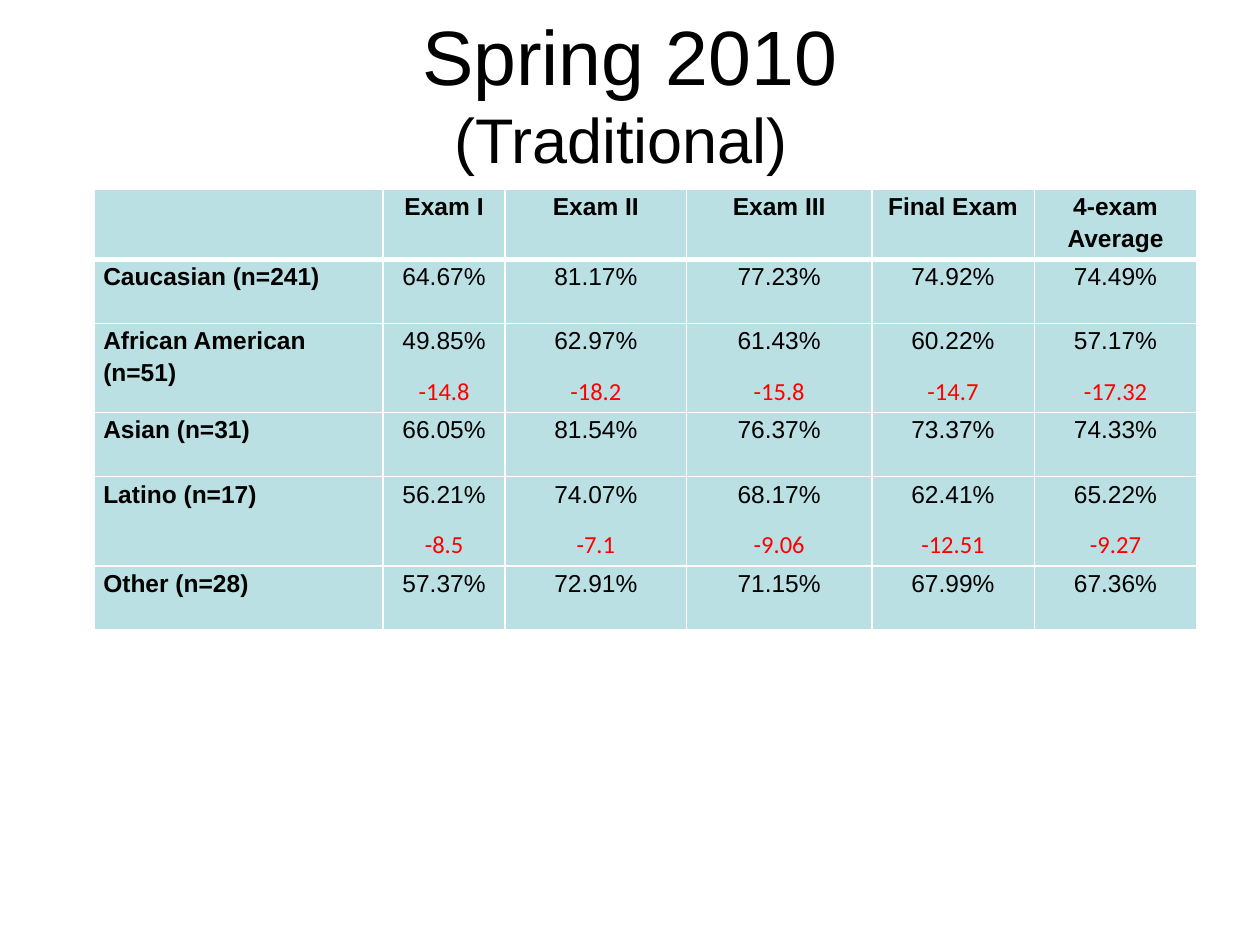
import dataclasses

import lxml.etree
import pptx
import pptx.dml.color
import pptx.enum.text
import pptx.oxml.ns
import pptx.util

Inches, Pt = pptx.util.Inches, pptx.util.Pt
ALIGN = pptx.enum.text.PP_ALIGN
ANCHOR = pptx.enum.text.MSO_ANCHOR


@dataclasses.dataclass(frozen=True)
class Theme:
    """Colours, fonts and type sizes of the slide."""
    text: str = "000000"
    gap: str = "FF0000"
    cell: str = "BBE0E3"
    rule: str = "FFFFFF"
    font: str = "Arial"
    gap_font: str = "Calibri"
    title: int = 44
    subtitle: int = 36
    body: int = 14
    thin: int = 1
    thick: int = 3


THEME = Theme()
HEADERS = ["", "Exam I", "Exam II", "Exam III", "Final Exam", "4-exam Average"]
GROUPS = [
    ("Caucasian (n=241)", ["64.67%", "81.17%", "77.23%", "74.92%", "74.49%"], []),
    ("African American (n=51)", ["49.85%", "62.97%", "61.43%", "60.22%", "57.17%"],
     ["-14.8", "-18.2", "-15.8", "-14.7", "-17.32"]),
    ("Asian (n=31)", ["66.05%", "81.54%", "76.37%", "73.37%", "74.33%"], []),
    ("Latino (n=17)", ["56.21%", "74.07%", "68.17%", "62.41%", "65.22%"],
     ["-8.5", "-7.1", "-9.06", "-12.51", "-9.27"]),
    ("Other (n=28)", ["57.37%", "72.91%", "71.15%", "67.99%", "67.36%"], []),
]
COLUMN_WIDTHS = [2.29, 0.97, 1.44, 1.47, 1.29, 1.29]
HEADER_HEIGHT, SINGLE_HEIGHT, DOUBLE_HEIGHT = 0.56, 0.51, 0.71


def add_text(p, text, size=THEME.body, font=THEME.font, color=THEME.text, bold=False):
    """Add a formatted run to a paragraph."""
    r = p.add_run()
    r.text = text
    r.font.size, r.font.name, r.font.bold = Pt(size), font, bold
    r.font.color.rgb = pptx.dml.color.RGBColor.from_string(color)


def style_cell(cell, top, bottom):
    """Set the insets, rules and fill of a table cell."""
    cell.margin_left = cell.margin_right = Inches(0.07)
    cell.margin_top = cell.margin_bottom = 0
    qn = pptx.oxml.ns.qn
    tcPr = cell._tc.get_or_add_tcPr()
    widths = {"lnL": THEME.thin, "lnR": THEME.thin, "lnT": top, "lnB": bottom}
    for side, width in widths.items():
        ln = lxml.etree.SubElement(tcPr, qn(f"a:{side}"), w=str(Pt(width)))
        fill = lxml.etree.SubElement(ln, qn("a:solidFill"))
        lxml.etree.SubElement(fill, qn("a:srgbClr"), val=THEME.rule)
    cell.fill.solid()
    cell.fill.fore_color.rgb = pptx.dml.color.RGBColor.from_string(THEME.cell)


def fill_cell(cell, lines, align):
    """Write one paragraph per (text, format) pair into a cell."""
    tf = cell.text_frame
    for i, (text, style) in enumerate(lines):
        p = tf.add_paragraph() if i else tf.paragraphs[0]
        p.alignment, p.line_spacing, p.space_after = align, 1.15, Pt(10)
        add_text(p, text, **style)


def place_title(s, box):
    """Place the two-line title in the box."""
    sp = s.shapes.title
    sp.left, sp.top, sp.width, sp.height = map(Inches, box)
    tf = sp.text_frame
    tf.word_wrap = True
    tf.auto_size = pptx.enum.text.MSO_AUTO_SIZE.NONE
    tf.vertical_anchor = ANCHOR.MIDDLE
    p = tf.paragraphs[0]
    p.alignment = ALIGN.CENTER
    add_text(p, "Spring 2010", size=THEME.title)
    p.add_line_break()
    add_text(p, "(Traditional) ", size=THEME.subtitle)


def place_scores(s, box):
    """Place the table of exam scores, scaling its grid to the box."""
    left, top, width, height = box
    row_heights = [HEADER_HEIGHT] + [
        DOUBLE_HEIGHT if gaps else SINGLE_HEIGHT for _, _, gaps in GROUPS]
    table = s.shapes.add_table(len(row_heights), len(HEADERS),
                               *map(Inches, box)).table
    for column, share in zip(table.columns, COLUMN_WIDTHS):
        column.width = Inches(width * share / sum(COLUMN_WIDTHS))
    for row, share in zip(table.rows, row_heights):
        row.height = Inches(height * share / sum(row_heights))

    bold, gap_style = {"bold": True}, {"font": THEME.gap_font, "color": THEME.gap}
    rows = [[[(text, bold)] if text else [] for text in HEADERS]]
    for name, scores, gaps in GROUPS:
        cells = [[(score, {})] for score in scores]
        for lines, gap in zip(cells, gaps):
            lines.append((gap, gap_style))
        rows.append([[(name, bold)]] + cells)
    for i, row in enumerate(rows):
        for j, lines in enumerate(row):
            cell = table.cell(i, j)
            style_cell(cell, THEME.thick if i == 1 else THEME.thin,
                       THEME.thick if i == 0 else THEME.thin)
            fill_cell(cell, lines, ALIGN.CENTER if i == 0 or j else ALIGN.LEFT)


def main():
    """Build and save the slide."""
    prs = pptx.Presentation()
    prs.slide_width, prs.slide_height = Inches(10), Inches(7.5)
    s = prs.slides.add_slide(prs.slide_layouts.get_by_name("Title Only"))
    place_title(s, (0.5, 0.3, 9, 0.87))
    place_scores(s, (0.75, 1.5, 8.75, 3.5))
    prs.save("out.pptx")


if __name__ == "__main__":
    main()
